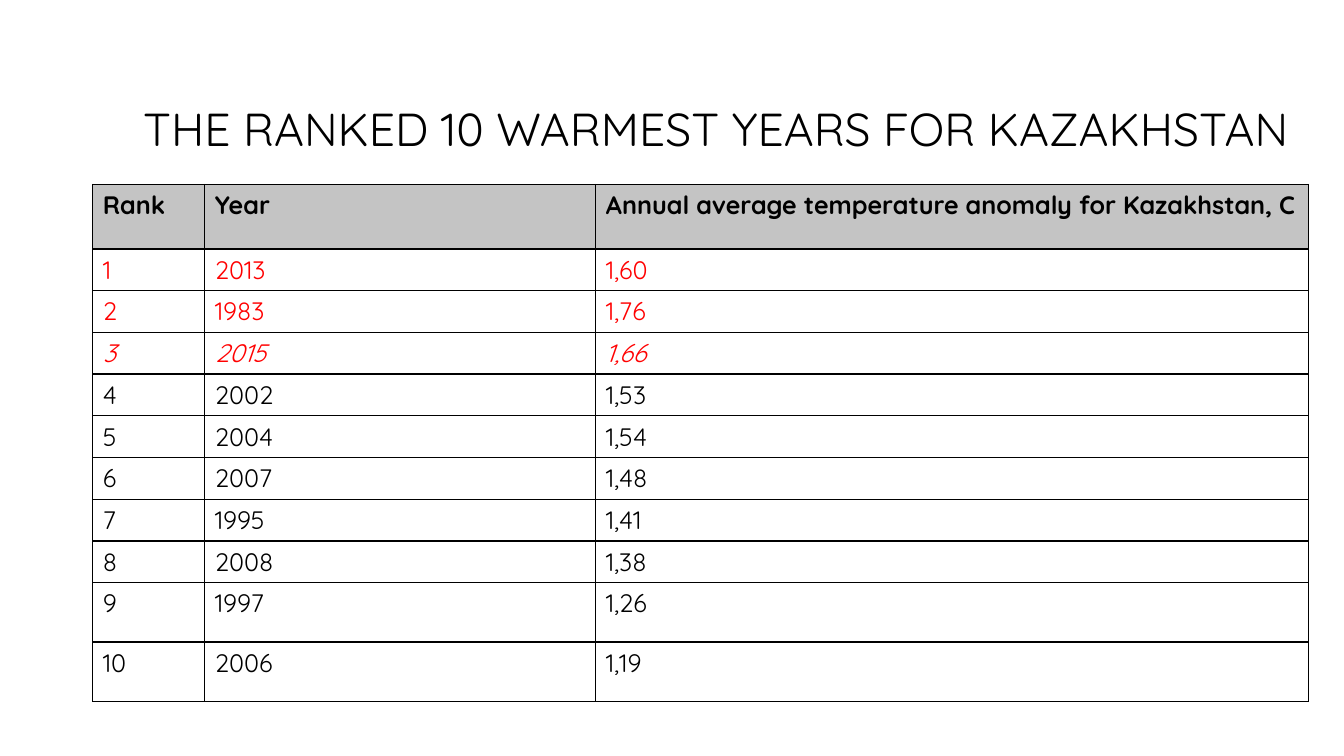
from dataclasses import dataclass

from lxml.etree import SubElement
from pptx import Presentation
from pptx.dml.color import RGBColor
from pptx.enum.text import MSO_ANCHOR, MSO_AUTO_SIZE, PP_ALIGN
from pptx.oxml.ns import qn
from pptx.util import Pt

SCALE = 9144


def px(count):
    return count * SCALE


@dataclass(frozen=True)
class Theme:
    font: str = "Quicksand"
    ink: str = "000000"
    hot: str = "FF0000"
    head: str = "C4C4C4"
    paper: str = "FFFFFF"
    title: int = 36
    body: int = 18
    rule: int = 1


def write(frame, text, *, font, size, color, bold=False, slant=False,
          align=PP_ALIGN.LEFT, space=1.0):
    para = frame.paragraphs[0]
    para.alignment = align
    para.line_spacing = space
    run = para.add_run()
    run.text = text
    run.font.name = font
    run.font.size = Pt(size)
    run.font.color.rgb = RGBColor.from_string(color)
    run.font.bold = bold
    run.font.italic = slant


class Page:
    def __init__(self, deck, theme):
        self.theme = theme
        self.slide = deck.slides.add_slide(deck.slide_layouts[5])
        fill = self.slide.background.fill
        fill.solid()
        fill.fore_color.rgb = RGBColor.from_string(theme.paper)

    def title(self, text, left, top, width, height):
        shape = self.slide.shapes.title
        shape.left, shape.top = px(left), px(top)
        shape.width, shape.height = px(width), px(height)
        frame = shape.text_frame
        frame.word_wrap = True
        frame.vertical_anchor = MSO_ANCHOR.MIDDLE
        frame.auto_size = MSO_AUTO_SIZE.TEXT_TO_FIT_SHAPE
        write(frame, text, font=self.theme.font, size=self.theme.title,
              color=self.theme.ink, align=PP_ALIGN.RIGHT, space=0.9)

    def border(self, cell):
        props = cell._tc.get_or_add_tcPr()
        for side in ("a:lnL", "a:lnR", "a:lnT", "a:lnB"):
            line = SubElement(props, qn(side), w=str(Pt(self.theme.rule)))
            fill = SubElement(line, qn("a:solidFill"))
            SubElement(fill, qn("a:srgbClr"), val=self.theme.ink)

    def cell(self, cell, text, fill=None, **style):
        self.border(cell)
        if fill:
            cell.fill.solid()
            cell.fill.fore_color.rgb = RGBColor.from_string(fill)
        else:
            cell.fill.background()
        write(cell.text_frame, text, font=self.theme.font,
              size=self.theme.body, **style)

    def table(self, rows, styles, left, top, widths, heights):
        frame = self.slide.shapes.add_table(
            len(rows), len(widths), px(left), px(top),
            px(sum(widths)), px(sum(heights)))
        grid = frame.table
        grid.first_row = grid.horz_banding = False
        for column, width in zip(grid.columns, widths):
            column.width = px(width)
        for line, height, row, style in zip(grid.rows, heights, rows, styles):
            line.height = px(height)
            for cell, text in zip(line.cells, row):
                self.cell(cell, text, **style)


HEADS = ("Rank", "Year", "Annual average temperature anomaly for Kazakhstan, C")
YEARS = (
    ("2013", "1,60"), ("1983", "1,76"), ("2015", "1,66"), ("2002", "1,53"),
    ("2004", "1,54"), ("2007", "1,48"), ("1995", "1,41"), ("2008", "1,38"),
    ("1997", "1,26"), ("2006", "1,19"),
)


def main():
    deck = Presentation()
    deck.slide_width, deck.slide_height = px(1333), px(750)
    theme = Theme()
    page = Page(deck, theme)
    page.title("THE RANKED 10 WARMEST YEARS FOR KAZAKHSTAN", 122, 81, 1166, 102)

    rows = [HEADS] + [(str(rank), *year) for rank, year in enumerate(YEARS, 1)]
    head = {"color": theme.ink, "bold": True, "fill": theme.head}
    hot = {"color": theme.hot}
    last = {"color": theme.hot, "slant": True}
    plain = {"color": theme.ink}
    styles = [head, hot, hot, last] + [plain] * 7
    heights = [64] + [37] * 6 + [39, 37] + [59] * 2
    page.table(rows, styles, 92, 183, (111, 388, 707), heights)
    deck.save("out.pptx")


if __name__ == "__main__":
    main()
